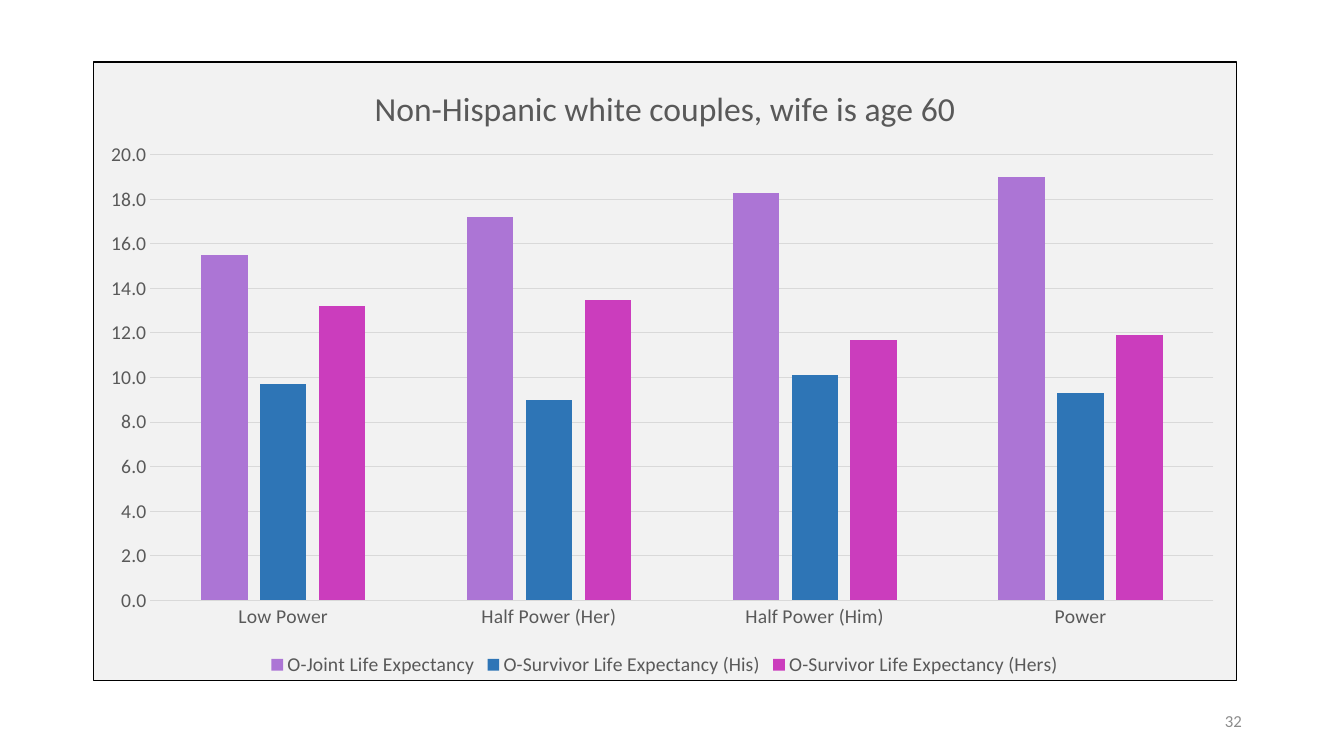
from lxml import etree
from pptx import Presentation
from pptx.chart.data import CategoryChartData as Data
from pptx.dml.color import RGBColor as RGB
from pptx.enum.chart import XL_CHART_TYPE as Kind, XL_LEGEND_POSITION as Side, XL_TICK_MARK as Tick
from pptx.enum.text import MSO_ANCHOR as Anchor, PP_ALIGN as Align
from pptx.oxml import parse_xml
from pptx.oxml.ns import nsdecls, qn
from pptx.util import Pt

PURPLE = RGB(0xAC, 0x75, 0xD5)
BLUE = RGB(0x2E, 0x75, 0xB6)
PINK = RGB(0xCB, 0x3D, 0xBD)
INK = RGB(0x59, 0x59, 0x59)
GRID = RGB(0xD9, 0xD9, 0xD9)
PANEL = RGB(0xF2, 0xF2, 0xF2)
BLACK = RGB(0, 0, 0)
GRAY = RGB(0x8C, 0x8C, 0x8C)
FACE = "Calibri"

TITLE = "Non-Hispanic white couples, wife is age 60"
GROUPS = ["Low Power", "Half Power (Her)", "Half Power (Him)", "Power"]
SERIES = [
    ("O-Joint Life Expectancy", PURPLE, [15.5, 17.2, 18.3, 19]),
    ("O-Survivor Life Expectancy (His)", BLUE, [9.7, 9, 10.1, 9.3]),
    ("O-Survivor Life Expectancy (Hers)", PINK, [13.2, 13.5, 11.7, 11.9]),
]
PAGE = "32"
PLOT = {"x": 0.05, "y": 0.15, "w": 0.93, "h": 0.72}


def style(font, size, color):
    font.name = FACE
    font.size = Pt(size)
    font.bold = False
    font.color.rgb = color


def rule(line, color):
    line.color.rgb = color
    line.width = Pt(0.75)


def frame(chart):
    panel = parse_xml(
        f'<c:spPr {nsdecls("c", "a")}>'
        f'<a:solidFill><a:srgbClr val="{PANEL}"/></a:solidFill>'
        f'<a:ln w="{Pt(0.75)}"><a:solidFill><a:srgbClr val="{BLACK}"/>'
        '</a:solidFill></a:ln></c:spPr>')
    root = chart.element
    root.find(qn("c:chart")).addnext(panel)


def place(chart):
    area = chart.element.find(qn("c:chart")).find(qn("c:plotArea"))
    for old in area.findall(qn("c:layout")):
        area.remove(old)
    layout = etree.Element(qn("c:layout"))
    area.insert(0, layout)
    manual = etree.SubElement(layout, qn("c:manualLayout"))
    modes = {"layoutTarget": "inner", "xMode": "edge", "yMode": "edge"}
    for name, value in {**modes, **PLOT}.items():
        etree.SubElement(manual, qn(f"c:{name}")).set("val", str(value))


def draw(slide):
    data = Data(number_format="#,##0.0")
    data.categories = GROUPS
    for name, _, values in SERIES:
        data.add_series(name, values)
    chart = slide.shapes.add_chart(
        Kind.COLUMN_CLUSTERED, Pt(66.24), Pt(43.92), Pt(817.2), Pt(442.8), data).chart
    style(chart.font, 10, BLACK)
    frame(chart)
    place(chart)

    chart.has_title = True
    head = chart.chart_title
    head.include_in_layout = False
    head.text_frame.text = TITLE
    style(head.text_frame.paragraphs[0].font, 24, INK)

    chart.has_legend = True
    key = chart.legend
    key.position = Side.BOTTOM
    key.include_in_layout = False
    style(key.font, 14, INK)

    for axis in (chart.category_axis, chart.value_axis):
        axis.major_tick_mark = axis.minor_tick_mark = Tick.NONE
        style(axis.tick_labels.font, 14, INK)
    rule(chart.category_axis.format.line, GRID)
    scale = chart.value_axis
    scale.minimum_scale, scale.maximum_scale, scale.major_unit = 0, 20, 2
    scale.tick_labels.number_format = "#,##0.0"
    scale.tick_labels.number_format_is_linked = False
    scale.format.line.fill.background()
    rule(scale.major_gridlines.format.line, GRID)

    plot = chart.plots[0]
    plot.gap_width, plot.overlap = 219, -27
    plot.vary_by_categories = False
    for bars, (_, color, _) in zip(plot.series, SERIES):
        bars.format.fill.solid()
        bars.format.fill.fore_color.rgb = color
        bars.invert_if_negative = False


def number(slide):
    box = slide.shapes.add_textbox(Pt(678.24), Pt(500.4), Pt(216), Pt(28.8))
    text = box.text_frame
    text.word_wrap = True
    text.vertical_anchor = Anchor.MIDDLE
    text.text = PAGE
    line = text.paragraphs[0]
    line.alignment = Align.RIGHT
    style(line.font, 12, GRAY)


def main():
    deck = Presentation()
    deck.slide_width, deck.slide_height = Pt(960), Pt(540)
    slide = deck.slides.add_slide(deck.slide_layouts[6])
    draw(slide)
    number(slide)
    deck.save("out.pptx")


if __name__ == "__main__":
    main()
